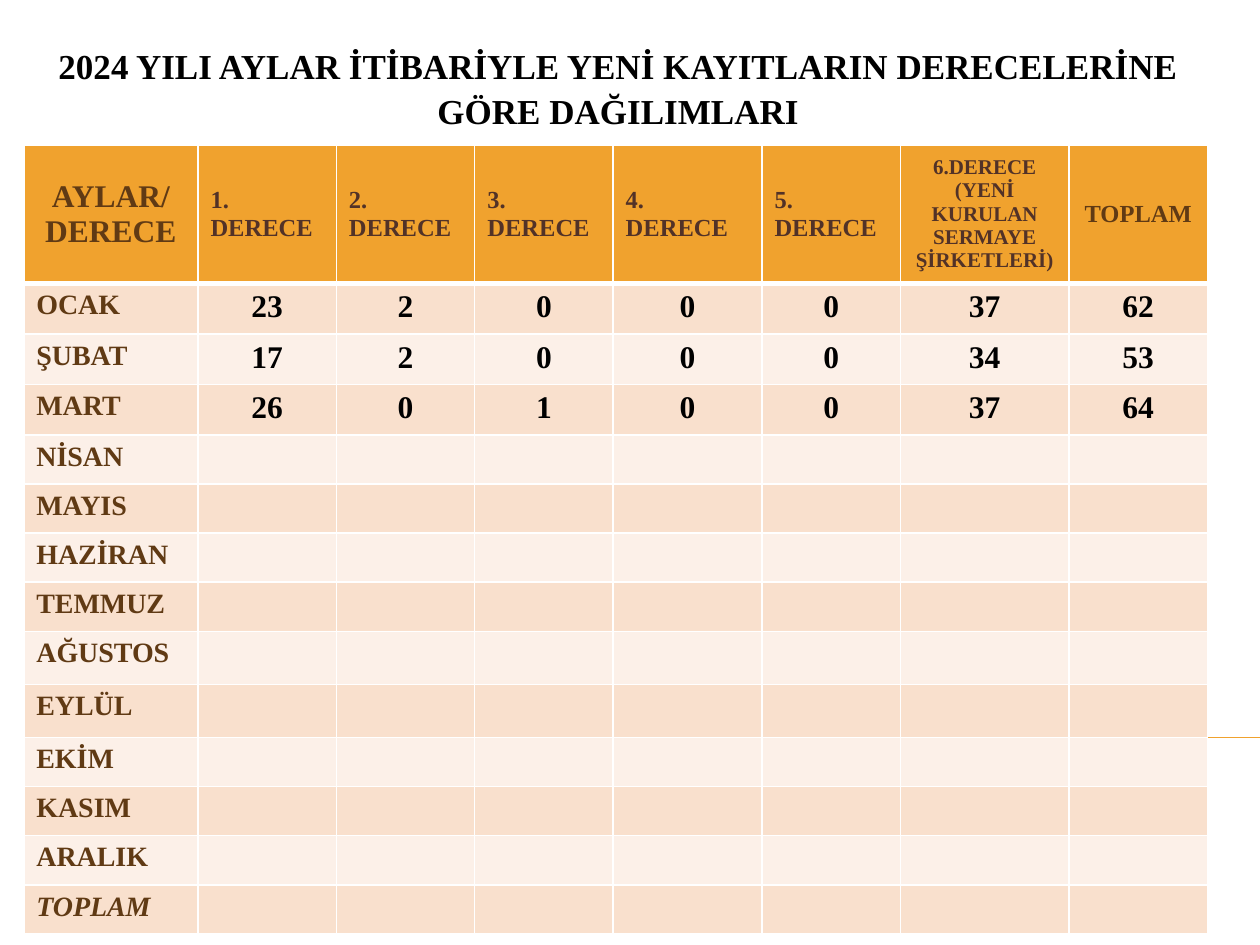
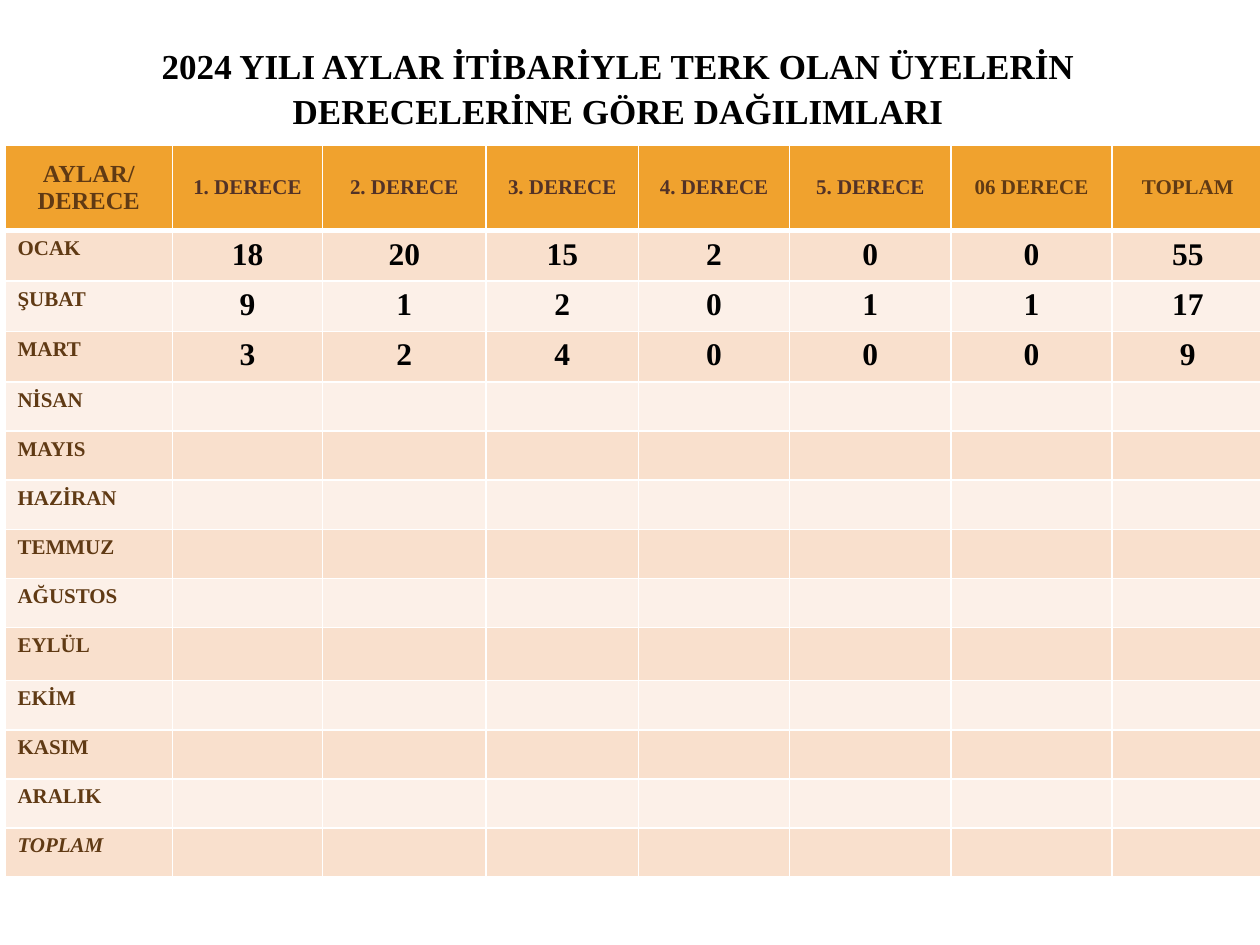
"""Build two monthly tables of member registrations and departures by degree."""
import pptx
import pptx.dml.color
import pptx.enum.shapes
import pptx.enum.text
import pptx.oxml
import pptx.oxml.ns
import pptx.util

Cm = pptx.util.Cm
Pt = pptx.util.Pt
RGBColor = pptx.dml.color.RGBColor
ALIGN = pptx.enum.text.PP_ALIGN
ANCHOR = pptx.enum.text.MSO_ANCHOR

FONT = "Times New Roman"
BLACK = RGBColor(0x00, 0x00, 0x00)
WHITE = RGBColor(0xFF, 0xFF, 0xFF)
ORANGE = RGBColor(0xF0, 0xA2, 0x2E)
BROWN = RGBColor(0x60, 0x3A, 0x14)
DARK_BROWN = RGBColor(0x52, 0x32, 0x27)
BANDS = (RGBColor(0xFC, 0xF0, 0xE8), RGBColor(0xF9, 0xE0, 0xCD))

ROW_HEIGHT = 0.99
TALL_ROW_HEIGHT = 1.07
VALUE_SIZE = 18
MONTHS = ["OCAK", "ŞUBAT", "MART", "NİSAN", "MAYIS", "HAZİRAN", "TEMMUZ",
          "AĞUSTOS", "EYLÜL", "EKİM", "KASIM", "ARALIK"]
TOTAL = "TOPLAM"
CORNER = "AYLAR/ DERECE"
DEGREES = [f"{number}. DERECE" for number in range(1, 6)]

NEW_MEMBERS = {
    "title": "2024 YILI AYLAR İTİBARİYLE YENİ KAYITLARIN DERECELERİNE GÖRE DAĞILIMLARI",
    "left": 0.48,
    "widths": [3.51, 2.79, 2.79, 2.79, 3.0, 2.79, 3.4, 2.79],
    "header_height": 2.74,
    "tall_rows": {8, 9},
    "headers": [CORNER, *DEGREES, "6.DERECE (YENİ KURULAN SERMAYE ŞİRKETLERİ)", TOTAL],
    "header_sizes": [18, 14, 14, 14, 14, 14, 12, 14],
    "dark_headers": range(1, 7),
    "left_headers": range(1, 6),
    "month_size": 16,
    "values": [[23, 2, 0, 0, 0, 37, 62],
               [17, 2, 0, 0, 0, 34, 53],
               [26, 0, 1, 0, 0, 37, 64]],
}
LEAVING_MEMBERS = {
    "title": "2024 YILI AYLAR İTİBARİYLE TERK OLAN ÜYELERİN DERECELERİNE GÖRE DAĞILIMLARI",
    "left": 0.1,
    "widths": [3.38, 3.02, 3.3, 3.07, 3.05, 3.25, 3.25, 3.05],
    "header_height": 1.73,
    "tall_rows": {9},
    "headers": [CORNER, *DEGREES, "06 DERECE", TOTAL],
    "header_sizes": [14] + [12] * 7,
    "dark_headers": range(1, 6),
    "left_headers": (),
    "month_size": 12,
    "values": [[18, 20, 15, 2, 0, 0, 55],
               [9, 1, 2, 0, 1, 1, 17],
               [3, 2, 4, 0, 0, 0, 9]],
}


def write_text(frame, text, size, color, align=ALIGN.CENTER, italic=False):
    """Write one bold line of text and return its paragraph."""
    para = frame.paragraphs[0]
    para.alignment = align
    span = para.add_run()
    span.text = text
    style = {"name": FONT, "size": Pt(size), "bold": True, "italic": italic}
    for name, value in style.items():
        setattr(span.font, name, value)
    span.font.color.rgb = color
    return para


def add_rule(page):
    """Draw the thin orange line that runs to the right edge."""
    rule = page.shapes.add_connector(
        pptx.enum.shapes.MSO_CONNECTOR.STRAIGHT, Cm(1.42), Cm(14.86), Cm(25.4), Cm(14.86))
    rule.line.color.rgb = ORANGE
    rule.line.width = Pt(0.75)
    pptx.oxml.ns.qn("a:effectLst")
    rule.element.spPr.append(pptx.oxml.parse_xml(
        f'<a:effectLst {pptx.oxml.ns.nsdecls("a")}/>'))


def add_title(page, text):
    """Add the centred slide title."""
    box = page.shapes.add_textbox(Cm(0.71), Cm(0.74), Cm(23.5), Cm(2.1))
    box.text_frame.word_wrap = True
    box.text_frame.vertical_anchor = ANCHOR.TOP
    write_text(box.text_frame, text, 20, BLACK).line_spacing = 1.05


def style_cell(cell, fill, top=1, bottom=1):
    """Fill a cell and give it white borders, with widths in points."""
    cell.fill.solid()
    cell.fill.fore_color.rgb = fill
    properties = cell._tc.get_or_add_tcPr()
    widths = {"lnL": 1, "lnR": 1, "lnT": top, "lnB": bottom}
    for position, (tag, width) in enumerate(widths.items()):
        properties.insert(position, pptx.oxml.parse_xml(
            f'<a:{tag} {pptx.oxml.ns.nsdecls("a")} w="{Pt(width)}">'
            f'<a:solidFill><a:srgbClr val="{WHITE}"/></a:solidFill></a:{tag}>'))


def fill_header(table, content):
    """Write the header row."""
    for column, (text, size) in enumerate(zip(content["headers"], content["header_sizes"])):
        cell = table.cell(0, column)
        style_cell(cell, ORANGE, bottom=3)
        cell.vertical_anchor = ANCHOR.MIDDLE
        color = DARK_BROWN if column in content["dark_headers"] else BROWN
        align = ALIGN.LEFT if column in content["left_headers"] else ALIGN.CENTER
        write_text(cell.text_frame, text, size, color, align)


def fill_body(table, content):
    """Write the month rows and the total row."""
    for row, label in enumerate(MONTHS + [TOTAL], start=1):
        values = content["values"][row - 1] if row <= len(content["values"]) else []
        for column in range(len(content["widths"])):
            cell = table.cell(row, column)
            style_cell(cell, BANDS[row % 2], top=3 if row == 1 else 1)
            if column == 0:
                write_text(cell.text_frame, label, content["month_size"], BROWN,
                           ALIGN.LEFT, italic=label == TOTAL)
            elif values:
                write_text(cell.text_frame, str(values[column - 1]), VALUE_SIZE, BLACK)
            else:
                cell.margin_top = cell.margin_bottom = 0


def add_degree_table(page, content):
    """Add the table of months against degrees."""
    heights = [content["header_height"]] + [
        TALL_ROW_HEIGHT if row in content["tall_rows"] else ROW_HEIGHT
        for row in range(1, len(MONTHS) + 2)]
    widths = content["widths"]
    table = page.shapes.add_table(
        len(heights), len(widths), Cm(content["left"]), Cm(2.92),
        Cm(sum(widths)), Cm(sum(heights))).table
    table.first_row = table.horz_banding = False
    for column, width in zip(table.columns, widths):
        column.width = Cm(width)
    for row, height in zip(table.rows, heights):
        row.height = Cm(height)
    fill_header(table, content)
    fill_body(table, content)


def main():
    """Build and save the deck."""
    deck = pptx.Presentation()
    deck.slide_width, deck.slide_height = Cm(25.4), Cm(19.05)
    for content in (NEW_MEMBERS, LEAVING_MEMBERS):
        page = deck.slides.add_slide(deck.slide_layouts[6])
        add_rule(page)
        add_title(page, content["title"])
        add_degree_table(page, content)
    deck.save("out.pptx")


if __name__ == "__main__":
    main()
